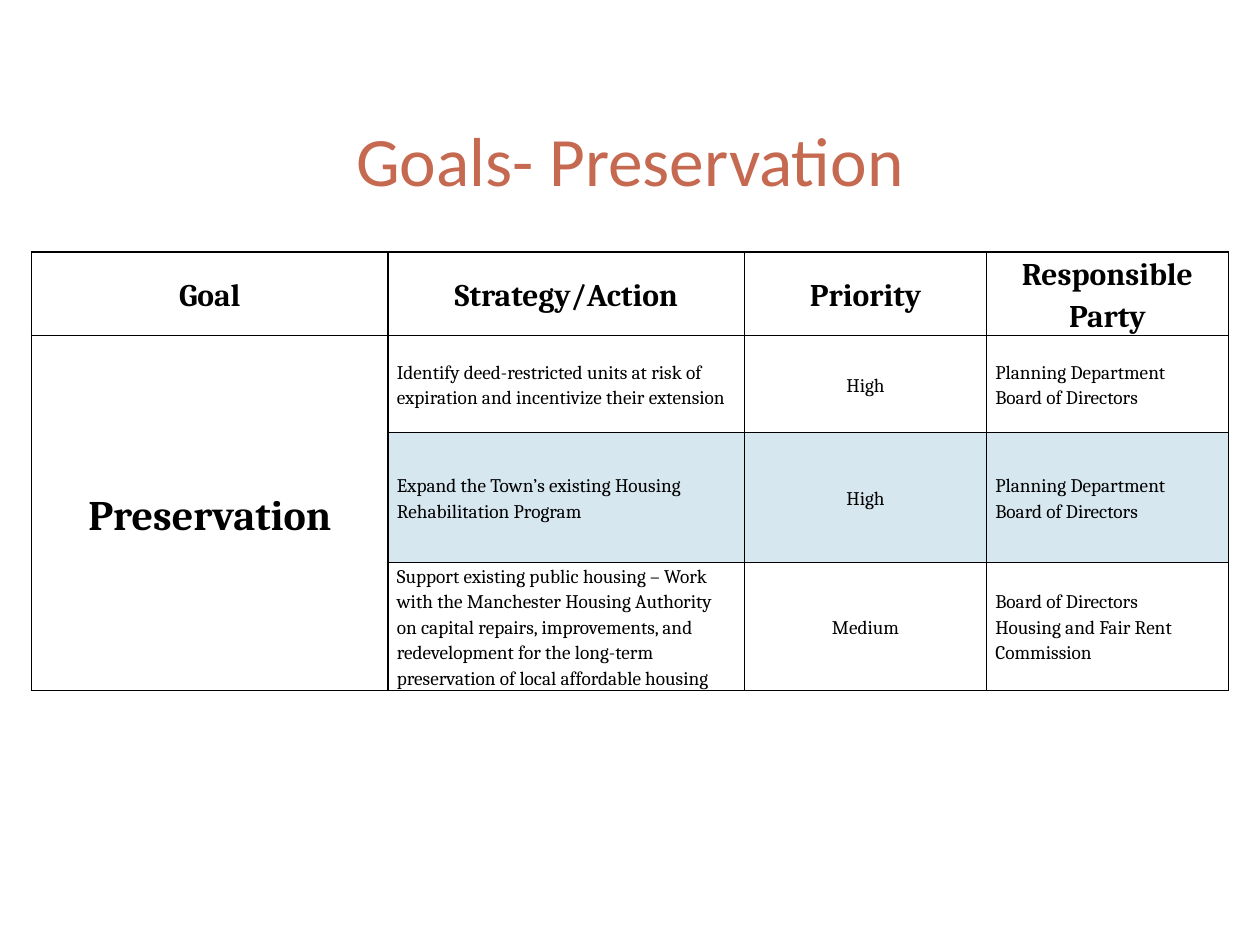
from dataclasses import dataclass

from lxml import etree
from pptx import Presentation
from pptx.dml.color import RGBColor
from pptx.enum.text import MSO_ANCHOR, MSO_AUTO_SIZE, PP_ALIGN
from pptx.oxml.ns import qn
from pptx.util import Inches, Pt

LEFT, CENTER = PP_ALIGN.LEFT, PP_ALIGN.CENTER
TOP, MIDDLE = MSO_ANCHOR.TOP, MSO_ANCHOR.MIDDLE
NO_FIT = MSO_AUTO_SIZE.NONE


@dataclass(frozen=True)
class Theme:
    accent: str = "C66951"
    ink: str = "000000"
    band: str = "D7E7F0"
    head_font: str = "Calibri"
    body_font: str = "Cambria"
    title: float = 39.6
    goal: float = 24
    head: float = 18
    body: float = 11
    rule: float = 1


@dataclass(frozen=True)
class Action:
    text: str
    level: str
    party: tuple[str, ...]
    shade: bool = False


THEME = Theme()
HEADS = ("Goal", "Strategy/Action", "Priority", "Responsible Party")
WIDTHS = (2.83, 2.83, 1.92, 1.92)
HEIGHTS = (0.65, 0.77, 1.03, 0.77)
PLAN = ("Planning Department", "Board of Directors")
ACTIONS = (
    Action("Identify deed-restricted units at risk of expiration and "
           "incentivize their extension", "High", PLAN),
    Action("Expand the Town’s existing Housing Rehabilitation Program",
           "High", PLAN, shade=True),
    Action("Support existing public housing – Work with the Manchester "
           "Housing Authority on capital repairs, improvements, and "
           "redevelopment for the long-term preservation of local "
           "affordable housing", "Medium",
           ("Board of Directors", "Housing and Fair Rent Commission")),
)


def add_run(para, text: str, font: str, size: float, color: str,
            bold: bool = False) -> None:
    run = para.add_run()
    run.text = text
    run.font.name = font
    run.font.size = Pt(size)
    run.font.bold = bold
    run.font.color.rgb = RGBColor.from_string(color)


def add_rules(cell) -> None:
    """Draw a thin line on all four sides of a cell."""
    props = cell._tc.get_or_add_tcPr()
    for side in ("a:lnL", "a:lnR", "a:lnT", "a:lnB"):
        line = etree.SubElement(props, qn(side), w=str(Pt(THEME.rule)))
        fill = etree.SubElement(line, qn("a:solidFill"))
        etree.SubElement(fill, qn("a:srgbClr"), val=THEME.ink)


def fill_cell(cell, lines: tuple[str, ...], size: float = THEME.body,
              align=LEFT, bold: bool = False) -> None:
    frame = cell.text_frame
    for i, text in enumerate(lines):
        para = frame.add_paragraph() if i else frame.paragraphs[0]
        para.alignment = align
        para.line_spacing = 1.15
        add_run(para, text, THEME.body_font, size, THEME.ink, bold)


def style_cell(cell, shade: bool) -> None:
    cell.vertical_anchor = MIDDLE
    cell.margin_left = cell.margin_right = Inches(0.07)
    cell.margin_top = cell.margin_bottom = 0
    add_rules(cell)
    if shade:
        cell.fill.solid()
        cell.fill.fore_color.rgb = RGBColor.from_string(THEME.band)
    else:
        cell.fill.background()


def add_title(slide, text: str) -> None:
    title = slide.shapes.title
    title.left, title.top = Inches(0.5), Inches(0.3)
    title.width, title.height = Inches(9), Inches(1.25)
    frame = title.text_frame
    frame.auto_size = NO_FIT
    frame.vertical_anchor = TOP
    frame.margin_top = Inches(0.63)
    frame.margin_bottom = 0
    para = frame.paragraphs[0]
    para.alignment = CENTER
    add_run(para, text, THEME.head_font, THEME.title, THEME.accent)


def add_goals(slide) -> None:
    table = slide.shapes.add_table(
        len(HEIGHTS), len(WIDTHS), Inches(0.25), Inches(2),
        Inches(sum(WIDTHS)), Inches(sum(HEIGHTS))).table
    table.first_row = table.horz_banding = False
    for col, width in zip(table.columns, WIDTHS):
        col.width = Inches(width)
    for row, height in zip(table.rows, HEIGHTS):
        row.height = Inches(height)

    # Cell looks: only the action columns take the shade
    for r in range(len(HEIGHTS)):
        for c in range(len(WIDTHS)):
            shade = r > 0 and c > 0 and ACTIONS[r - 1].shade
            style_cell(table.cell(r, c), shade)

    # Header row
    for c, text in enumerate(HEADS):
        fill_cell(table.cell(0, c), (text,), THEME.head, CENTER, True)

    # Goal, spanning all its actions
    goal = table.cell(1, 0)
    goal.merge(table.cell(len(ACTIONS), 0))
    fill_cell(goal, ("Preservation",), THEME.goal, CENTER, True)

    # One row for each action
    for r, act in enumerate(ACTIONS, 1):
        fill_cell(table.cell(r, 1), (act.text,))
        fill_cell(table.cell(r, 2), (act.level,), align=CENTER)
        fill_cell(table.cell(r, 3), act.party)


def main() -> None:
    deck = Presentation()
    deck.slide_width, deck.slide_height = Inches(10), Inches(7.5)
    slide = deck.slides.add_slide(deck.slide_layouts[5])
    add_title(slide, "Goals- Preservation")
    add_goals(slide)
    deck.save("out.pptx")


if __name__ == "__main__":
    main()
